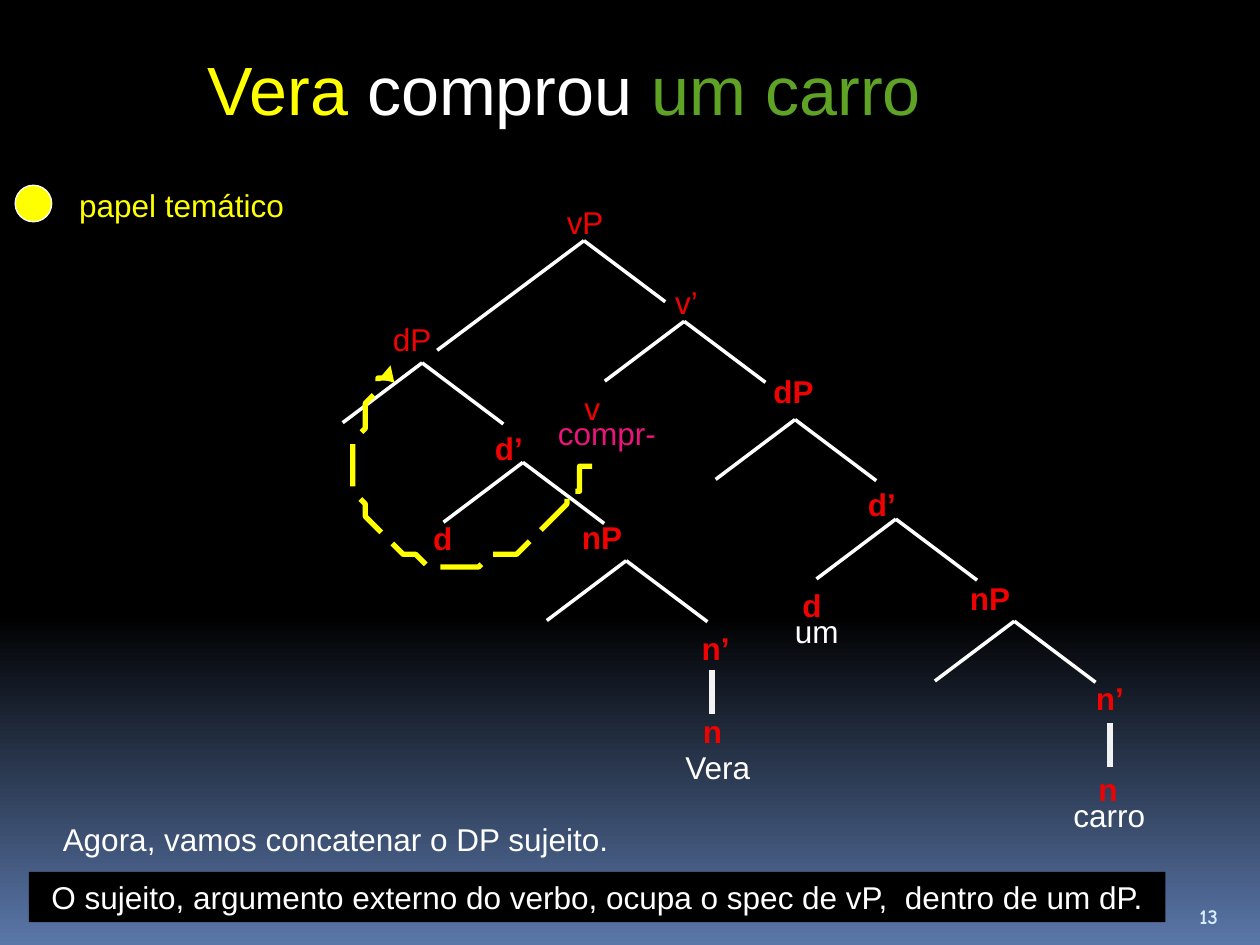
"""Build a syntax tree slide for the sentence "Vera comprou um carro"."""
from lxml import etree
from pptx import Presentation
from pptx.dml.color import RGBColor
from pptx.enum.dml import MSO_LINE
from pptx.enum.shapes import MSO_CONNECTOR, MSO_SHAPE
from pptx.enum.text import MSO_ANCHOR
from pptx.oxml.ns import qn
from pptx.util import Inches, Pt

STRAIGHT = MSO_CONNECTOR.STRAIGHT
RECTANGLE = MSO_SHAPE.RECTANGLE
OVAL = MSO_SHAPE.OVAL
LONG_DASH = MSO_LINE.LONG_DASH
TOP, MIDDLE, BOTTOM = MSO_ANCHOR.TOP, MSO_ANCHOR.MIDDLE, MSO_ANCHOR.BOTTOM

COLUMNS, ROWS = 100, 75
CELL = Inches(0.1)
LABEL_HEIGHT = 4
CURVE_STEPS = 16

THEME = {
    "font": "Arial", "number_font": "Comic Neue",
    "title": 39, "body": 18, "number": 12,
    "branch": 2, "stem": 3, "arrow": 3, "outline": 0.75,
    "black": "000000", "horizon": "5A77A9", "white": "FFFFFF", "pale": "F2F2F2",
    "red": "EE0202", "pink": "EA157A", "yellow": "FFFF00", "green": "5FA326",
    "sky": "D6ECFF",
}

TITLE = [("Vera ", "yellow"), ("comprou ", "white"), ("um carro", "green")]
TITLE_BOX = (15.5, 2.6, 63.8, 8.8)
NOTE = "O sujeito, argumento externo do verbo, ocupa o spec de vP,  dentro de um dP."
NOTE_BOX = (2.3, 69.2, 90.2, LABEL_HEIGHT)
MARKER_BOX = (1.2, 14.7, 2.9, 2.9)
NUMBER_BOX = (94.2, 70.2, 5, LABEL_HEIGHT)

PHRASES = [("vP", 44, 15.6), ("v’", 52.6, 22), ("v", 45.4, 30.4), ("dP", 30.2, 24.9)]
HEADS = [
    ("dP", 60.4, 29), ("d’", 67.9, 38), ("d", 62.7, 46), ("nP", 76, 45.5),
    ("n’", 86, 53.4), ("n", 86.2, 60.6),
    ("d’", 38.3, 33.6), ("d", 33.4, 40.7), ("nP", 45.2, 40.6),
    ("n’", 54.7, 49.4), ("n", 54.8, 56),
]
WORDS = [
    (" compr-", 42.6, 32.4, 11.5, "pink"),
    ("um", 62.1, 48.1, 6, "white"),
    ("carro", 84.2, 62.7, 8.2, "white"),
    ("Vera", 53.4, 58.9, 8.2, "white"),
    ("Agora, vamos concatenar o DP sujeito.", 4, 64.6, 48, "white"),
    ("papel temático", 5.3, 14.3, 20, "yellow"),
]

LEFT_BRANCH, RIGHT_BRANCH, LONG_BRANCH = (-6.3, 4.75), (6.45, 4.85), (-11.65, 8.7)
ROOT = (46.35, 19.1)
NODES = [
    (54.3, 25.5), (63.1, 33.3), (71.1, 41.2), (80.5, 49.3),
    (33.5, 28.8), (41.5, 36.7), (49.7, 44.5),
]
STEMS = [(88.1, 57.4), (56.5, 53.2)]
STEM = (0, 3.5)

ARROW_START = (46.7, 36.7)
ARROW_CURVES = [
    ((46.3, 37.9), (45.6, 39.1), (44.9, 40.1)),
    ((41.3, 44.9), (35.2, 46.3), (31.3, 43.4)),
    ((27.4, 40.5), (27.2, 34.3), (30.8, 29.5)),
    ((30.9, 29.4), (30.9, 29.3), (31, 29.2)),
]


def cells(*counts):
    return [round(count * CELL) for count in counts]


def color(name):
    return RGBColor.from_string(THEME[name])


def write(shape, runs, size="body", font="font", bold=False, anchor=TOP):
    frame = shape.text_frame
    frame.word_wrap = True
    frame.vertical_anchor = anchor
    paragraph = frame.paragraphs[0]
    for text, tint in runs:
        run = paragraph.add_run()
        run.text = text
        run.font.name = THEME[font]
        run.font.size = Pt(THEME[size])
        run.font.bold = bold
        run.font.color.rgb = color(tint)


def add_text(slide, box, runs, **style):
    write(slide.shapes.add_textbox(*cells(*box)), runs, **style)


def add_filled(slide, kind, box, fill, outline=None):
    shape = slide.shapes.add_shape(kind, *cells(*box))
    shape.shadow.inherit = False
    shape.fill.solid()
    shape.fill.fore_color.rgb = color(fill)
    if outline:
        shape.line.color.rgb = color(outline)
        shape.line.width = Pt(THEME["outline"])
    else:
        shape.line.fill.background()
    return shape


def add_line(slide, start, offset, weight="branch", tint="white"):
    end = [base + step for base, step in zip(start, offset)]
    connector = slide.shapes.add_connector(STRAIGHT, *cells(*start, *end))
    connector.line.color.rgb = color(tint)
    connector.line.width = Pt(THEME[weight])
    etree.SubElement(connector._element.spPr, qn("a:effectLst"))


def curve_points(start, curves):
    points = []
    for first, second, end in curves:
        for step in range(1, CURVE_STEPS + 1):
            t = step / CURVE_STEPS
            u = 1 - t
            points.append(tuple(
                u**3 * a + 3 * u * u * t * b + 3 * u * t * t * c + t**3 * d
                for a, b, c, d in zip(start, first, second, end)
            ))
        start = end
    return points


def add_arrow(slide):
    builder = slide.shapes.build_freeform(*ARROW_START, scale=CELL)
    builder.add_line_segments(curve_points(ARROW_START, ARROW_CURVES), close=False)
    arrow = builder.convert_to_shape()
    arrow.shadow.inherit = False
    arrow.fill.background()
    arrow.line.color.rgb = color("yellow")
    arrow.line.width = Pt(THEME["arrow"])
    arrow.line.dash_style = LONG_DASH
    outline = arrow._element.spPr.find(qn("a:ln"))
    etree.SubElement(outline, qn("a:tailEnd"), type="triangle")


def paint_background(slide):
    fill = slide.background.fill
    fill.gradient()
    fill.gradient_angle = 270
    for stop, position, tint in zip(fill.gradient_stops, (0.65, 1), ("black", "horizon")):
        stop.position = position
        stop.color.rgb = color(tint)


def main():
    presentation = Presentation()
    presentation.slide_width, presentation.slide_height = cells(COLUMNS, ROWS)
    slide = presentation.slides.add_slide(presentation.slide_layouts[6])
    paint_background(slide)

    add_text(slide, TITLE_BOX, TITLE, size="title", anchor=MIDDLE)
    add_line(slide, ROOT, LONG_BRANCH)
    add_line(slide, ROOT, RIGHT_BRANCH)
    for node in NODES:
        add_line(slide, node, LEFT_BRANCH)
        add_line(slide, node, RIGHT_BRANCH)
    for top in STEMS:
        add_line(slide, top, STEM, weight="stem", tint="pale")

    for labels, bold in ((PHRASES, False), (HEADS, True)):
        for text, left, top in labels:
            width = 2.2 + 2.1 * len(text)
            add_text(slide, (left, top, width, LABEL_HEIGHT), [(text, "red")], bold=bold)
    for text, left, top, width, tint in WORDS:
        add_text(slide, (left, top, width, LABEL_HEIGHT), [(text, tint)])

    write(add_filled(slide, RECTANGLE, NOTE_BOX, "black"), [(NOTE, "white")])
    add_filled(slide, OVAL, MARKER_BOX, "yellow", "white")
    add_arrow(slide)
    add_text(slide, NUMBER_BOX, [("13", "sky")], size="number",
             font="number_font", bold=True, anchor=BOTTOM)
    presentation.save("out.pptx")


if __name__ == "__main__":
    main()
